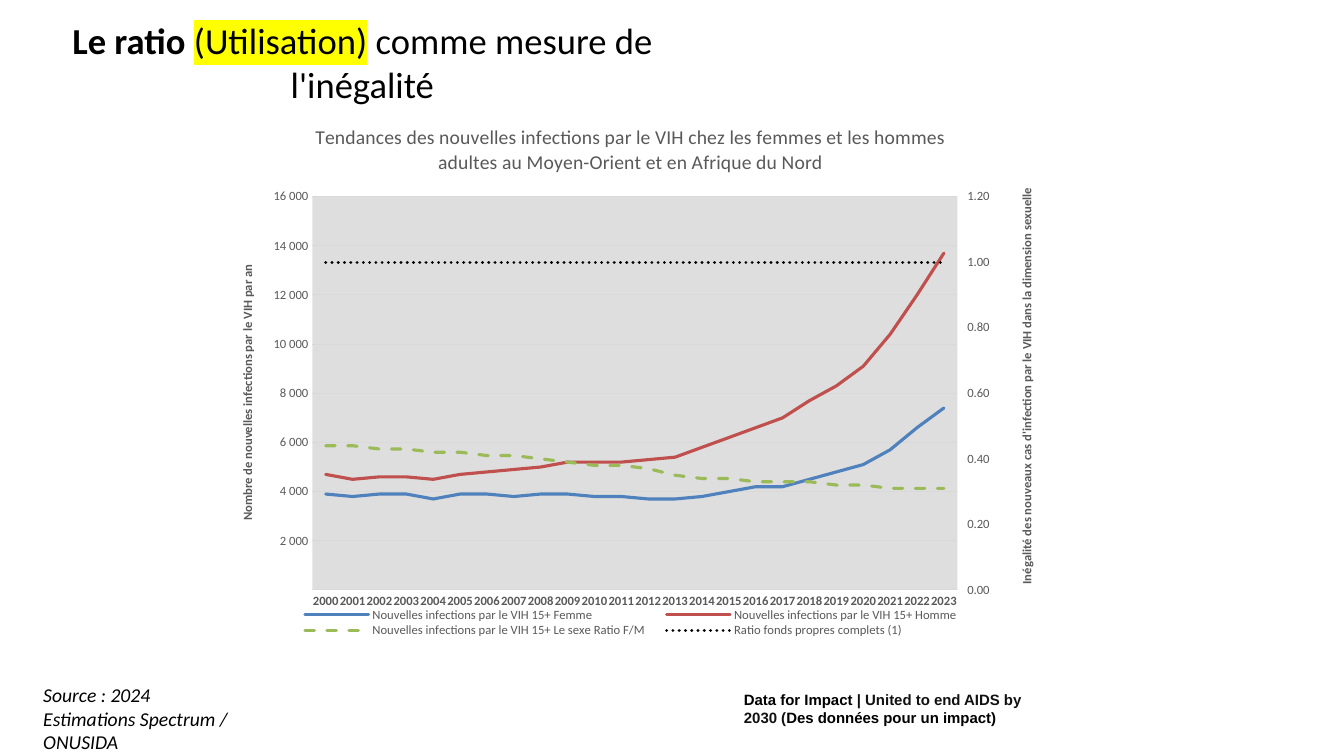
from copy import deepcopy

from lxml.etree import SubElement
from pptx import Presentation
from pptx.chart.axis import ValueAxis
from pptx.chart.data import CategoryChartData
from pptx.dml.color import RGBColor
from pptx.enum.chart import XL_CHART_TYPE, XL_LEGEND_POSITION, XL_TICK_MARK
from pptx.enum.dml import MSO_LINE
from pptx.enum.text import MSO_ANCHOR, MSO_AUTO_SIZE, PP_ALIGN
from pptx.oxml import parse_xml
from pptx.oxml.ns import nsdecls, qn
from pptx.util import Pt

PX = 9144  # EMU in one px, 100 px to the inch
BLACK = RGBColor(0x00, 0x00, 0x00)
INK = RGBColor(0x11, 0x11, 0x11)
GREY = RGBColor(0x59, 0x59, 0x59)
RULE = RGBColor(0xD9, 0xD9, 0xD9)
PLOT_FILL = RGBColor(0xBF, 0xBF, 0xBF)
YELLOW = RGBColor(0xFF, 0xFF, 0x00)
BLUE = RGBColor(0x4F, 0x81, 0xBD)
RED = RGBColor(0xC0, 0x50, 0x4D)
GREEN = RGBColor(0x9B, 0xBB, 0x59)

YEARS = [str(year) for year in range(2000, 2024)]
WOMEN = [3900, 3800, 3900, 3900, 3700, 3900, 3900, 3800, 3900, 3900, 3800, 3800,
         3700, 3700, 3800, 4000, 4200, 4200, 4500, 4800, 5100, 5700, 6600, 7400]
MEN = [4700, 4500, 4600, 4600, 4500, 4700, 4800, 4900, 5000, 5200, 5200, 5200,
       5300, 5400, 5800, 6200, 6600, 7000, 7700, 8300, 9100, 10400, 12000, 13700]
RATIO = [0.44, 0.44, 0.43, 0.43, 0.42, 0.42, 0.41, 0.41, 0.40, 0.39, 0.38, 0.38,
         0.37, 0.35, 0.34, 0.34, 0.33, 0.33, 0.33, 0.32, 0.32, 0.31, 0.31, 0.31]
PREFIX = "Nouvelles infections par le VIH 15+ "
# Name, values, colour, dash, number format
SERIES = [
    (PREFIX + "Femme", WOMEN, BLUE, MSO_LINE.SOLID, "General"),
    (PREFIX + "Homme", MEN, RED, MSO_LINE.SOLID, "General"),
    (PREFIX + "Le sexe Ratio F/M", RATIO, GREEN, MSO_LINE.DASH, "0.00"),
    ("Ratio fonds propres complets (1)", [1] * len(YEARS), BLACK,
     MSO_LINE.ROUND_DOT, "0.00"),
]


def set_font(font, size, color, bold=False, italic=False, name="Calibri"):
    font.name, font.size = name, Pt(size)
    font.bold, font.italic = bold, italic
    font.color.rgb = color


def add_span(para, text, size, color, highlight=None, **style):
    span = para.add_run()
    span.text = text
    set_font(span.font, size, color, **style)
    if highlight is not None:
        mark = parse_xml(f'<a:highlight {nsdecls("a")}><a:srgbClr val="{highlight}"/>'
                         '</a:highlight>')
        span.font.fill  # the highlight follows the text fill
        span._r.rPr.find(qn("a:solidFill")).addnext(mark)


def add_text_box(page, left, top, width, height):
    box = page.shapes.add_textbox(left * PX, top * PX, width * PX, height * PX)
    box.text_frame.word_wrap = True
    return box.text_frame.paragraphs[0]


def place(parent, index, **values):
    """Give a chart part a manual layout, in fractions of the chart."""
    for old in parent.findall(qn("c:layout")):
        parent.remove(old)
    layout = parse_xml(f'<c:layout {nsdecls("c")}><c:manualLayout/></c:layout>')
    for tag, value in values.items():
        SubElement(layout[0], qn(f"c:{tag}"), val=str(value))
    parent.insert(index, layout)


def style_value_axis(axis, title, x, y, top, step, number_format):
    axis.minimum_scale, axis.maximum_scale, axis.major_unit = 0, top, step
    axis.tick_labels.number_format = number_format
    axis.tick_labels.number_format_is_linked = False
    set_font(axis.tick_labels.font, 9, GREY)
    axis.format.line.fill.background()
    frame = axis.axis_title.text_frame
    add_span(frame.paragraphs[0], title, 9, GREY, bold=True)
    body = frame._txBody.find(qn("a:bodyPr"))
    body.set("rot", "-5400000")
    body.set("vert", "horz")
    place(axis.axis_title._element, 1, xMode="edge", yMode="edge", x=x, y=y)


def split_to_right_axis(plot_area, first):
    """Move the series from number `first` on to a second pair of axes."""
    left_lines = plot_area.find(qn("c:lineChart"))
    right_lines = deepcopy(left_lines)
    for group, unwanted in ((left_lines, slice(first, None)),
                            (right_lines, slice(first))):
        for series in group.findall(qn("c:ser"))[unwanted]:
            group.remove(series)
    left_lines.addnext(right_lines)

    category = plot_area.find(qn("c:catAx"))
    value = plot_area.find(qn("c:valAx"))
    right_category, right_value = deepcopy(category), deepcopy(value)
    value.addnext(right_value)
    right_value.addnext(right_category)
    ids = right_lines.findall(qn("c:axId"))
    for element, number in zip(ids, ("50010", "50020")):
        element.set("val", number)
    for axis, own, other in ((right_category, "50010", "50020"),
                             (right_value, "50020", "50010")):
        axis.find(qn("c:axId")).set("val", own)
        axis.find(qn("c:crossAx")).set("val", other)
    right_category.find(qn("c:delete")).set("val", "1")
    right_value.find(qn("c:axPos")).set("val", "r")
    right_value.find(qn("c:crosses")).set("val", "max")
    return ValueAxis(right_value)


def add_trend_chart(page, left, top, width, height):
    data = CategoryChartData()
    data.categories = YEARS
    for name, values, _, _, number_format in SERIES:
        data.add_series(name, values, number_format)
    chart = page.shapes.add_chart(XL_CHART_TYPE.LINE, left * PX, top * PX,
                                  width * PX, height * PX, data).chart
    set_font(chart.font, 10, BLACK)
    plot_area = chart.element.find(".//" + qn("c:plotArea"))

    # Lines
    chart.plots[0].vary_by_categories = False
    for series, (_, _, color, dash, _) in zip(chart.plots[0].series, SERIES):
        series.smooth = False
        line = series.format.line
        line.color.rgb, line.width, line.dash_style = color, Pt(2.25), dash
        series._element.find(".//" + qn("a:ln")).set("cap", "rnd")

    # Axes
    years, counts = chart.category_axis, chart.value_axis
    years.major_tick_mark = counts.major_tick_mark = XL_TICK_MARK.NONE
    years.format.line.color.rgb, years.format.line.width = RULE, Pt(0.75)
    set_font(years.tick_labels.font, 9, GREY, bold=True)
    ratios = split_to_right_axis(plot_area, 2)
    ratios.has_major_gridlines = False
    ratios.major_tick_mark = XL_TICK_MARK.OUTSIDE
    grid = counts.major_gridlines.format.line
    grid.color.rgb, grid.width = RULE, Pt(0.75)
    style_value_axis(counts, "Nombre de nouvelles infections par le VIH par an",
                     0.03, 0.29, 16000, 2000, r"###\ ###\ ###")
    style_value_axis(ratios, "Inégalité des nouveaux cas d'infection par le VIH "
                     "dans la dimension sexuelle", 0.96, 0.15, 1.2, 0.2, "0.00")

    # Plot area
    place(plot_area, 0, layoutTarget="inner", xMode="edge", yMode="edge",
          x=0.12, y=0.17, w=0.77, h=0.72)
    plot_area.append(parse_xml(
        f'<c:spPr {nsdecls("c", "a")}><a:solidFill><a:srgbClr val="{PLOT_FILL}">'
        '<a:alpha val="50000"/></a:srgbClr></a:solidFill></c:spPr>'))

    # Title and legend
    chart.has_title = True
    add_span(chart.chart_title.text_frame.paragraphs[0],
             "Tendances des nouvelles infections par le VIH chez les femmes et les "
             "hommes adultes au Moyen-Orient et en Afrique du Nord", 14, GREY)
    chart.has_legend = True
    chart.legend.position = XL_LEGEND_POSITION.BOTTOM
    chart.legend.include_in_layout = False
    set_font(chart.legend.font, 9, GREY)
    place(chart.element.find(".//" + qn("c:legend")), 1, xMode="edge", yMode="edge",
          x=0.09, y=0.92, w=0.82, h=0.06)


def format_title(title):
    title.left, title.top, title.width, title.height = (
        length * PX for length in (33, 20, 653, 83))
    frame = title.text_frame
    frame.word_wrap, frame.auto_size = True, MSO_AUTO_SIZE.NONE
    frame.vertical_anchor = MSO_ANCHOR.MIDDLE
    para = frame.paragraphs[0]
    para.alignment = PP_ALIGN.CENTER
    add_span(para, "Le ratio ", 26.1, BLACK, bold=True)
    add_span(para, "(Utilisation)", 26.1, BLACK, highlight=YELLOW)
    add_span(para, " comme mesure de l'inégalité", 26.1, BLACK)


def main():
    deck = Presentation()
    deck.slide_width, deck.slide_height = 1333 * PX, 750 * PX
    page = deck.slides.add_slide(deck.slide_layouts[5])
    format_title(page.shapes.title)
    add_trend_chart(page, 210, 103, 831, 542)

    # Source
    para = add_text_box(page, 33, 673, 275, 57)
    add_span(para, "Source : 2024", 14, BLACK, italic=True)
    para.add_line_break()
    add_span(para, "Estimations Spectrum / ONUSIDA", 14, BLACK, italic=True)

    # Footer
    para = add_text_box(page, 728, 680, 306, 28)
    for text, color in (("Data for Impact ", BLACK),
                        ("| United to end AIDS by 2030 (", INK),
                        ("Des données pour un impact)", BLACK)):
        add_span(para, text, 10.7, color, bold=True, name="Arial")
    deck.save("out.pptx")


if __name__ == "__main__":
    main()
